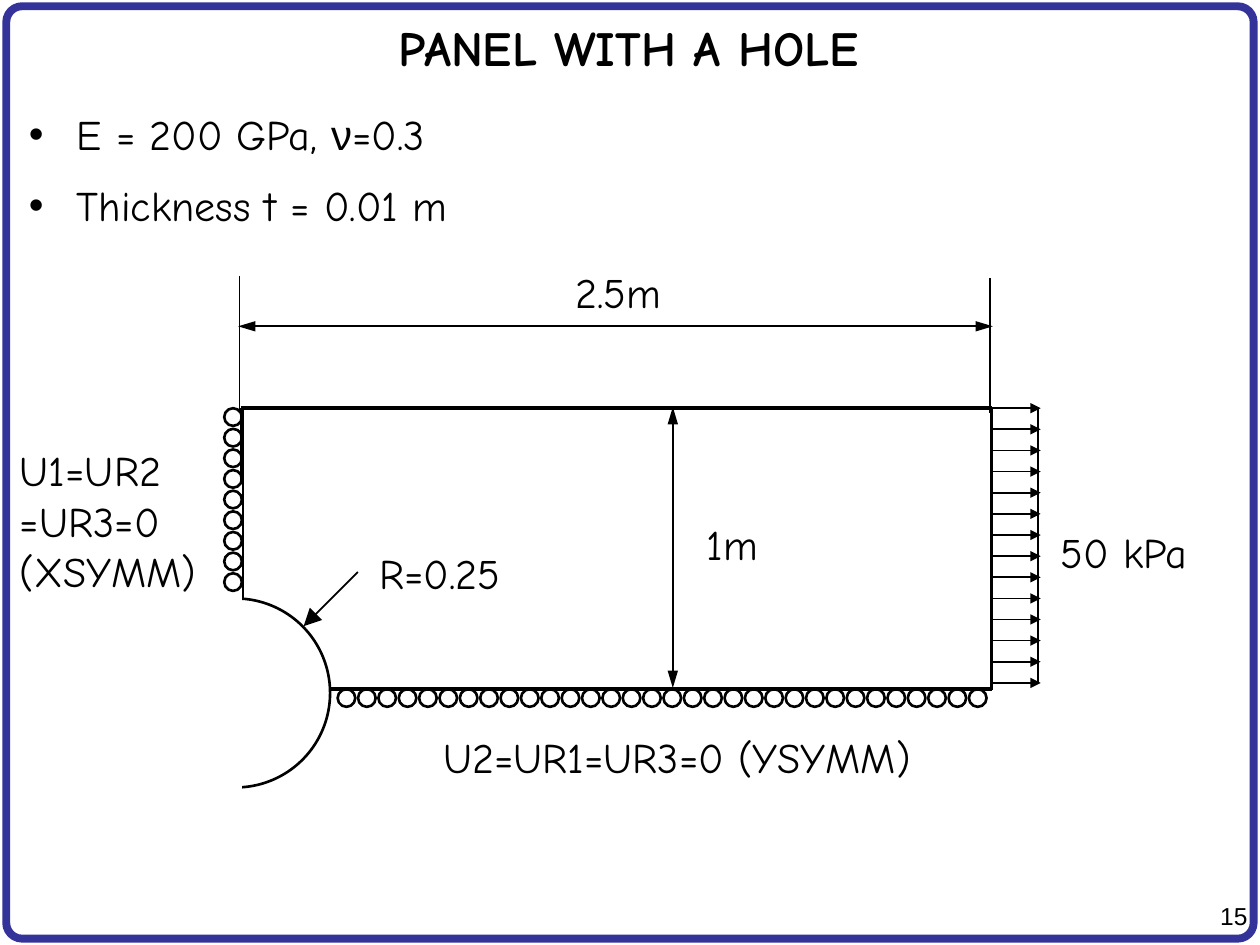
import pptx
import pptx.util
import pptx.oxml
import pptx.oxml.ns
import pptx.dml.color
import pptx.enum.shapes
import pptx.enum.text

Inches, Pt = pptx.util.Inches, pptx.util.Pt
RGB = pptx.dml.color.RGBColor
SHAPE = pptx.enum.shapes.MSO_SHAPE
ALIGN = pptx.enum.text.PP_ALIGN
ANCHOR = pptx.enum.text.MSO_ANCHOR
AUTO = pptx.enum.text.MSO_AUTO_SIZE
qn = pptx.oxml.ns.qn

THEME = {
    "ink": RGB(0, 0, 0), "paper": RGB(255, 255, 255), "frame": RGB(0x33, 0x33, 0x99),
    "font": "Comic Neue", "plain": "Arial",
    "title": 28, "text": 24, "number": 14,
    "thin": 1, "medium": 1.5, "thick": 2, "border": 4.5,
}

TITLE = "PANEL WITH A HOLE"
BULLETS = [
    [("E = 200 GPa, ", "font"), ("ν", "plain"), ("=0.3", "font")],
    [("Thickness t = 0.01 m", "font")],
]
LABELS = [
    (["1m"], (5.51, 4.07, 0.61, 0.5)),
    (["2.5m"], (4.47, 2.07, 0.96, 0.5)),
    (["50 kPa"], (8.32, 4.13, 1.24, 0.5)),
    (["R=0.25"], (2.91, 4.3, 1.29, 0.5)),
    (["U2=UR1=UR3=0 (YSYMM)"], (3.42, 5.76, 4.25, 0.5)),
    (["U1=UR2", "=UR3=0", "(XSYMM)"], (0.06, 3.48, 1.73, 1.72)),
]

LEFT, RIGHT, TOP, BOTTOM = 1.92, 7.87, 3.24, 5.47
HOLE = (1.12, 4.75, 1.5, 1.5)
HOLE_COVER = (0.65, 3.84, 1.27, 2.53)
PANEL_EDGES = [
    (LEFT, TOP, LEFT, 4.75),
    (2.63, BOTTOM, RIGHT, BOTTOM),
    (RIGHT, TOP, RIGHT, BOTTOM + 0.01),
    (LEFT - 0.01, TOP, RIGHT, TOP),
]
EXTENSIONS = [(7.86, 2.21, 7.86, 3.28), (1.9, 2.19, 1.9, 3.26)]
DIMENSIONS = [(5.34, 3.23, 5.34, 5.46), (1.89, 2.59, 7.88, 2.59)]
RADIUS = (2.84, 4.54, 2.41, 4.97)
ROLLER = 0.14
SIDE_ROLLERS = (9, 3.24, 4.55)
BASE_ROLLERS = (32, 2.68, 7.69)
LOADS = (14, TOP, 5.42)
LOAD_END = 8.26


def spread(count, first, last):
    step = (last - first) / (count - 1)
    return [first + i * step for i in range(count)]


def place(sp, box):
    sp.left, sp.top, sp.width, sp.height = map(Inches, box)


def add_run(p, text, size, font="font", bold=False):
    r = p.add_run()
    r.text = text
    r.font.name = THEME[font]
    r.font.size = Pt(THEME[size])
    r.font.bold = bold
    r.font.color.rgb = THEME["ink"]


def add_shape(s, kind, box, fill=None, line=None, width="medium"):
    sp = s.shapes.add_shape(kind, *map(Inches, box))
    sp.shadow.inherit = False
    if fill:
        sp.fill.solid()
        sp.fill.fore_color.rgb = THEME[fill]
    else:
        sp.fill.background()
    if line:
        sp.line.color.rgb = THEME[line]
        sp.line.width = Pt(THEME[width])
    else:
        sp.line.fill.background()
    return sp


def add_line(s, ends, width="thin", arrows=(), head_width="med", head_length="med"):
    sp = s.shapes.add_connector(
        pptx.enum.shapes.MSO_CONNECTOR.STRAIGHT, *map(Inches, ends))
    sp.line.color.rgb = THEME["ink"]
    sp.line.width = Pt(THEME[width])
    ln = sp.line._get_or_add_ln()
    for end in arrows:
        arrow = pptx.oxml.parse_xml(
            f'<a:{end} {pptx.oxml.ns.nsdecls("a")} type="triangle" '
            f'w="{head_width}" len="{head_length}"/>')
        ln.append(arrow)
    sp._element.spPr.append(
        pptx.oxml.parse_xml(f'<a:effectLst {pptx.oxml.ns.nsdecls("a")}/>'))


def add_bullet(p):
    pPr = p._p.get_or_add_pPr()
    pPr.set("marL", str(Inches(0.38)))
    pPr.set("indent", str(Inches(-0.38)))
    pPr.append(pptx.oxml.parse_xml(
        f'<a:buFont {pptx.oxml.ns.nsdecls("a")} typeface="{THEME["plain"]}"/>'))
    pPr.append(pptx.oxml.parse_xml(
        f'<a:buChar {pptx.oxml.ns.nsdecls("a")} char="•"/>'))


def add_label(s, lines, box, size="text", font="font", align=ALIGN.LEFT):
    tf = s.shapes.add_textbox(*map(Inches, box)).text_frame
    tf.word_wrap = False
    for i, text in enumerate(lines):
        p = tf.add_paragraph() if i else tf.paragraphs[0]
        p.alignment = align
        add_run(p, text, size, font)


def add_headings(s):
    title, body = s.shapes.title, s.placeholders[1]
    place(title, (0.04, 0.05, 9.9, 0.65))
    title.text_frame.vertical_anchor = ANCHOR.MIDDLE
    title.text_frame.auto_size = AUTO.NONE
    p = title.text_frame.paragraphs[0]
    p.alignment = ALIGN.CENTER
    add_run(p, TITLE, "title", bold=True)

    place(body, (0.13, 0.81, 9.74, 6.42))
    tf = body.text_frame
    tf.auto_size = AUTO.NONE
    for i, runs in enumerate(BULLETS):
        p = tf.add_paragraph() if i else tf.paragraphs[0]
        p.space_before = Pt(12)
        add_bullet(p)
        for text, font in runs:
            add_run(p, text, "text", font)


def add_panel(s):
    add_shape(s, SHAPE.OVAL, HOLE, line="ink")
    for edge in PANEL_EDGES:
        add_line(s, edge, "thick")
    add_shape(s, SHAPE.RECTANGLE, HOLE_COVER, fill="paper")


def add_dimensions(s):
    for ends in EXTENSIONS:
        add_line(s, ends)
    for ends in DIMENSIONS:
        add_line(s, ends, arrows=("headEnd", "tailEnd"), head_length="lg")
    add_line(s, RADIUS, arrows=("tailEnd",), head_width="lg", head_length="lg")


def add_supports(s):
    corners = [(LEFT - ROLLER, y) for y in spread(*SIDE_ROLLERS)]
    corners += [(x, BOTTOM) for x in spread(*BASE_ROLLERS)]
    for x, y in corners:
        add_shape(s, SHAPE.OVAL, (x, y, ROLLER, ROLLER), line="ink")


def add_loads(s):
    count, first, last = LOADS
    for y in spread(count, first, last):
        add_line(s, (RIGHT, y, LOAD_END, y), arrows=("tailEnd",))
    add_line(s, (8.24, first, 8.24, last))


def main():
    prs = pptx.Presentation()
    prs.slide_width, prs.slide_height = Inches(10), Inches(7.5)
    s = prs.slides.add_slide(prs.slide_layouts[1])
    frame = add_shape(s, SHAPE.ROUNDED_RECTANGLE, (0.05, 0.05, 9.9, 7.4),
                      line="frame", width="border")
    frame.adjustments[0] = 0.017
    add_headings(s)
    add_panel(s)
    add_dimensions(s)
    add_supports(s)
    add_loads(s)
    for lines, box in LABELS:
        add_label(s, lines, box)
    add_label(s, ["15"], (9.46, 7.1, 0.54, 0.33), "number", "plain", ALIGN.RIGHT)
    prs.save("out.pptx")


if __name__ == "__main__":
    main()
